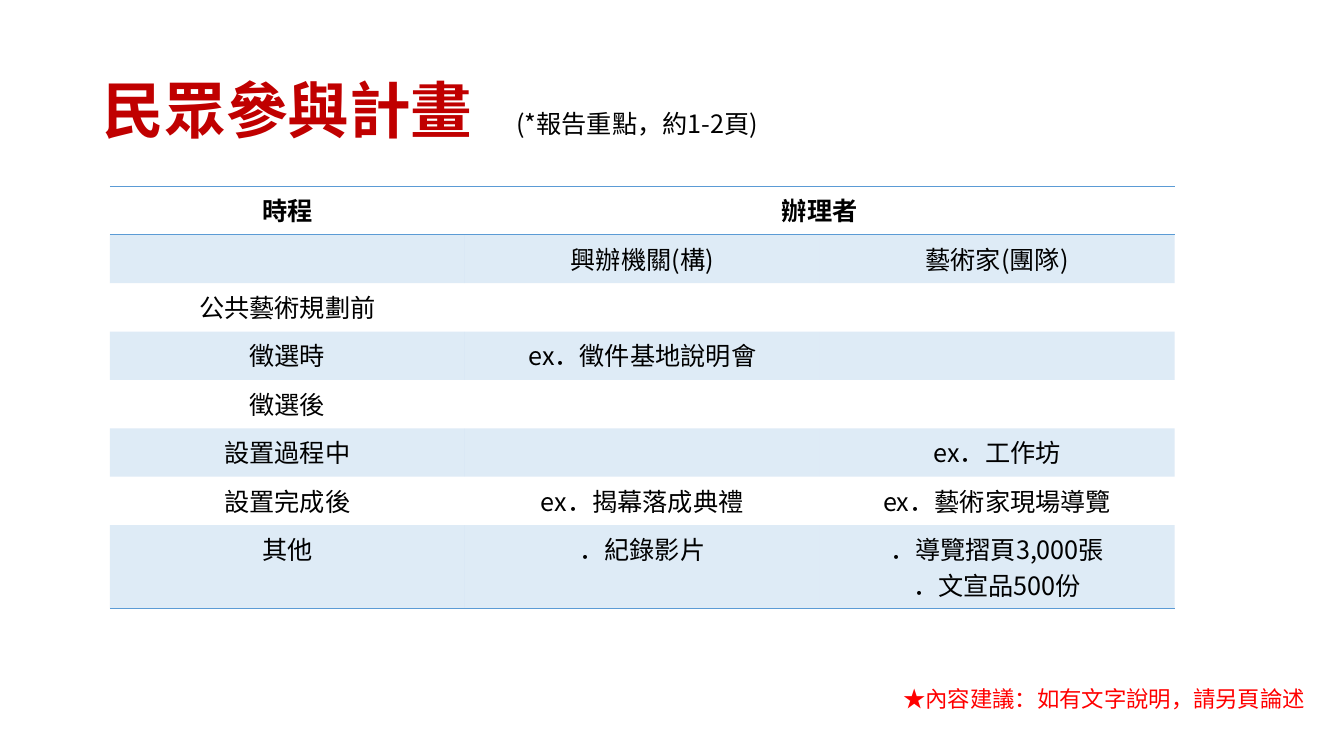
import dataclasses

import lxml.etree
import pptx
import pptx.dml.color
import pptx.enum.text
import pptx.oxml.ns
import pptx.util

Inches = pptx.util.Inches
qn = pptx.oxml.ns.qn


@dataclasses.dataclass(frozen=True)
class Theme:
    """Colours, type sizes and font of the slide."""
    face: str = "Noto Sans CJK SC"
    title: str = "C00000"
    text: str = "000000"
    alert: str = "FF0000"
    accent: str = "5B9BD5"
    tint: int = 20
    head: int = 44
    body: int = 18
    note: int = 16


THEME = Theme()
PLAIN = "{2D5ABB26-0587-4C30-8999-92F81FD0307C}"
ROWS = [
    ("時程", "辦理者", ""),
    ("", "興辦機關(構)", "藝術家(團隊)"),
    ("公共藝術規劃前", "", ""),
    ("徵選時", "ex．徵件基地說明會", ""),
    ("徵選後", "", ""),
    ("設置過程中", "", "ex．工作坊"),
    ("設置完成後", "ex．揭幕落成典禮", "ex．藝術家現場導覽"),
    ("其他", "．紀錄影片", "．導覽摺頁3,000張\n．文宣品500份"),
]


def style(font, size, color, bold=False):
    """Set size, colour, weight and both typefaces of a font."""
    font.size = pptx.util.Pt(size)
    font.bold = bold
    font.color.rgb = pptx.dml.color.RGBColor.from_string(color)
    font.name = THEME.face
    lxml.etree.SubElement(font._element, qn("a:ea"), typeface=THEME.face)


def rule(cell, side):
    """Draw a one-point accent line on a side of a cell."""
    line = lxml.etree.SubElement(
        cell._tc.get_or_add_tcPr(), qn("a:ln" + side), w=str(pptx.util.Pt(1)))
    fill = lxml.etree.SubElement(line, qn("a:solidFill"))
    lxml.etree.SubElement(fill, qn("a:srgbClr"), val=THEME.accent)


def shade(cell, band):
    """Fill a cell with the pale accent, or leave it clear."""
    if not band:
        cell.fill.background()
        return
    cell.fill.solid()
    cell.fill.fore_color.rgb = pptx.dml.color.RGBColor.from_string(THEME.accent)
    color = cell._tc.tcPr.find(".//" + qn("a:solidFill") + "/" + qn("a:srgbClr")) \
        if cell._tc.tcPr.find(qn("a:lnB")) is None \
        else cell._tc.tcPr.find(qn("a:solidFill"))[0]
    lxml.etree.SubElement(color, qn("a:alpha"), val=str(THEME.tint * 1000))


def place(shape, box):
    """Move a shape into a box given in inches."""
    shape.left, shape.top, shape.width, shape.height = map(Inches, box)


def add_title(slide, box):
    """Fill the title with its heading and a small remark after a tab."""
    title = slide.shapes.title
    place(title, box)
    frame = title.text_frame
    frame.auto_size = pptx.enum.text.MSO_AUTO_SIZE.NONE
    frame.vertical_anchor = pptx.enum.text.MSO_ANCHOR.MIDDLE
    para = frame.paragraphs[0]
    para.alignment = pptx.enum.text.PP_ALIGN.LEFT
    para.line_spacing = 0.9
    tabs = lxml.etree.SubElement(para._p.get_or_add_pPr(), qn("a:tabLst"))
    lxml.etree.SubElement(tabs, qn("a:tab"), pos=str(Inches(4.1)), algn="l")
    for text, size, color, bold in (
            ("民眾參與計畫\t", THEME.head, THEME.title, True),
            ("(*報告重點，約1-2頁)", THEME.body, THEME.text, False)):
        run = para.add_run()
        run.text = text
        style(run.font, size, color, bold)


def add_plan(slide, box):
    """Place the schedule table, with banded rows and ruled header."""
    last = len(ROWS) - 1
    table = slide.shapes.add_table(
        len(ROWS), len(ROWS[0]), *map(Inches, box)).table
    table._tbl.tblPr.find(qn("a:tableStyleId")).text = PLAIN
    for r, row in enumerate(ROWS):
        table.rows[r].height = Inches(0.48)
        for c, text in enumerate(row):
            cell = table.cell(r, c)
            cell.text = text
            for para in cell.text_frame.paragraphs:
                para.alignment = pptx.enum.text.PP_ALIGN.CENTER
                style(para.font, THEME.body, THEME.text, r == 0)
            if r == 0:
                rule(cell, "T")
            if r in (0, last):
                rule(cell, "B")
            shade(cell, r % 2 == 1)
    table.cell(0, 1).merge(table.cell(0, 2))


def add_note(slide, box):
    """Place the red advice line."""
    frame = slide.shapes.add_textbox(*map(Inches, box)).text_frame
    frame.word_wrap = True
    para = frame.paragraphs[0]
    para.text = "★內容建議：如有文字說明，請另頁論述"
    para.line_spacing = 1.2
    para.space_before = pptx.util.Pt(12)
    style(para.font, THEME.note, THEME.alert)


def main():
    """Build and save the slide."""
    deck = pptx.Presentation()
    deck.slide_width, deck.slide_height = Inches(13.33), Inches(7.5)
    slide = deck.slides.add_slide(deck.slide_layouts[5])
    add_title(slide, (0.92, 0.4, 11.5, 1.45))
    add_plan(slide, (1.09, 1.85, 10.56, 3.84))
    add_note(slide, (8.86, 6.69, 4.47, 0.57))
    deck.save("out.pptx")


if __name__ == "__main__":
    main()
